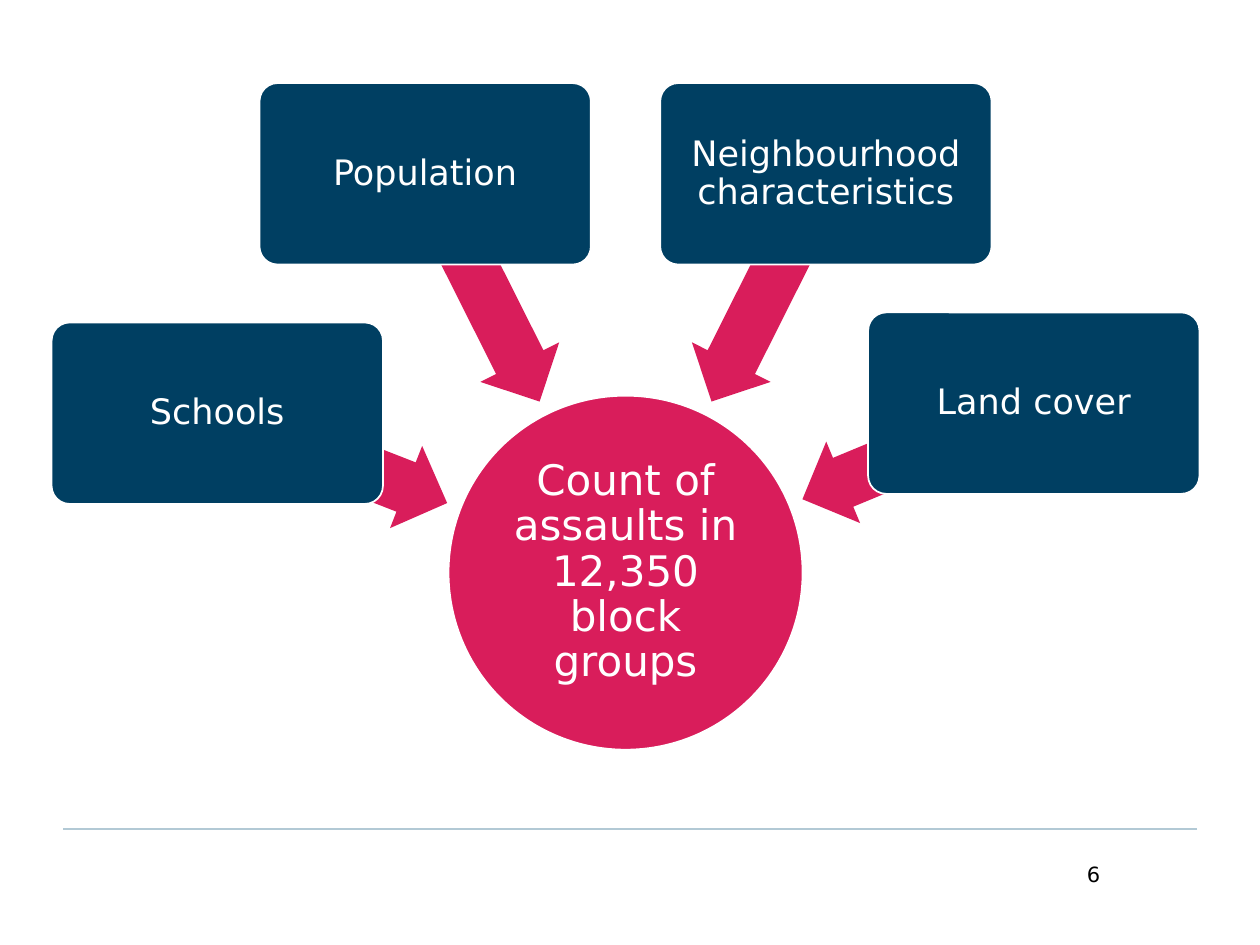
from math import atan2, cos, degrees, hypot, sin

from lxml import etree
from pptx import Presentation
from pptx.dml.color import RGBColor
from pptx.enum.shapes import MSO_CONNECTOR, MSO_SHAPE
from pptx.enum.text import MSO_ANCHOR, PP_ALIGN
from pptx.oxml.ns import qn
from pptx.util import Inches, Pt

COLORS = {
    "outcome": "D91D5B",
    "factor": "003F62",
    "white": "FFFFFF",
    "rule": "B2C9D5",
    "number": "000000",
}
FONT = "DejaVu Sans"
FACTOR_SIZE = (2.63, 1.44)
FACTORS = [
    ("Schools", 0.41, 2.56),
    ("Population", 2.06, 0.66),
    ("Neighbourhood characteristics", 5.24, 0.66),
    ("Land cover", 6.89, 2.48),
]
OUTCOME_BOX = (3.56, 3.14, 2.81, 2.81)
ARROW_HEIGHT = 0.7
ARROW_STOP = 1.52


def rgb(name):
    """Return the named colour."""
    return RGBColor.from_string(COLORS[name])


def center(box):
    """Return the middle point of a box."""
    left, top, width, height = box
    return left + width / 2, top + height / 2


def write(frame, text, size, color, align):
    """Put one formatted paragraph into a text frame."""
    frame.word_wrap = True
    frame.text = text
    paragraph = frame.paragraphs[0]
    paragraph.alignment = align
    font = paragraph.runs[0].font
    font.name, font.size = FONT, Pt(size)
    font.color.rgb = rgb(color)
    return paragraph


def add_filled(slide, preset, box, color):
    """Add a flat filled preset shape without an outline."""
    shape = slide.shapes.add_shape(preset, *map(Inches, box))
    shape.shadow.inherit = False
    shape.fill.solid()
    shape.fill.fore_color.rgb = rgb(color)
    shape.line.fill.background()
    return shape


def add_node(slide, preset, box, color, text, size, inset):
    """Add a white-edged shape with centred text."""
    node = add_filled(slide, preset, box, color)
    node.line.color.rgb = rgb("white")
    node.line.width = Pt(1)
    frame = node.text_frame
    frame.margin_left = frame.margin_right = Inches(inset)
    frame.margin_top = frame.margin_bottom = Inches(inset)
    frame.vertical_anchor = MSO_ANCHOR.MIDDLE
    write(frame, text, size, "white", PP_ALIGN.CENTER).line_spacing = 0.9
    return node


def add_influence(slide, factor_box, outcome_box):
    """Add an arrow from the factor's centre towards the outcome."""
    x, y = center(factor_box)
    target_x, target_y = center(outcome_box)
    angle = atan2(target_y - y, target_x - x)
    length = hypot(target_x - x, target_y - y) - ARROW_STOP
    left = x + cos(angle) * length / 2 - length / 2
    top = y + sin(angle) * length / 2 - ARROW_HEIGHT / 2
    arrow = add_filled(slide, MSO_SHAPE.LEFT_ARROW, (left, top, length, ARROW_HEIGHT), "outcome")
    arrow.adjustments[0], arrow.adjustments[1] = 0.6, 0.5
    arrow.rotation = degrees(angle) + 180


def add_diagram(slide, outcome_box):
    """Add the outcome circle and the factors that point to it."""
    add_node(slide, MSO_SHAPE.OVAL, outcome_box, "outcome",
             "Count of assaults in 12,350 block groups", 24, 0.02)
    for label, left, top in FACTORS:
        factor_box = (left, top, *FACTOR_SIZE)
        add_influence(slide, factor_box, outcome_box)
        factor = add_node(slide, MSO_SHAPE.ROUNDED_RECTANGLE, factor_box, "factor", label, 20, 0.04)
        factor.adjustments[0] = 0.1


def add_footer(slide, left, top, width):
    """Add the footer rule and the slide number."""
    rule = slide.shapes.add_connector(
        MSO_CONNECTOR.STRAIGHT, Inches(left + width), Inches(top), Inches(left), Inches(top))
    rule.line.color.rgb = rgb("rule")
    rule.line.width = Pt(1.25)
    etree.SubElement(rule._element.spPr, qn("a:effectLst"))
    number = slide.shapes.add_textbox(
        Inches(left + 6), Inches(top + 0.21), Inches(2.33), Inches(0.52))
    write(number.text_frame, "6", 12, "number", PP_ALIGN.RIGHT)


def main():
    """Build and save the slide."""
    deck = Presentation()
    deck.slide_width, deck.slide_height = Inches(10), Inches(7.5)
    slide = deck.slides.add_slide(deck.slide_layouts[6])
    add_footer(slide, 0.5, 6.58, 9)
    add_diagram(slide, OUTCOME_BOX)
    deck.save("out.pptx")


if __name__ == "__main__":
    main()
